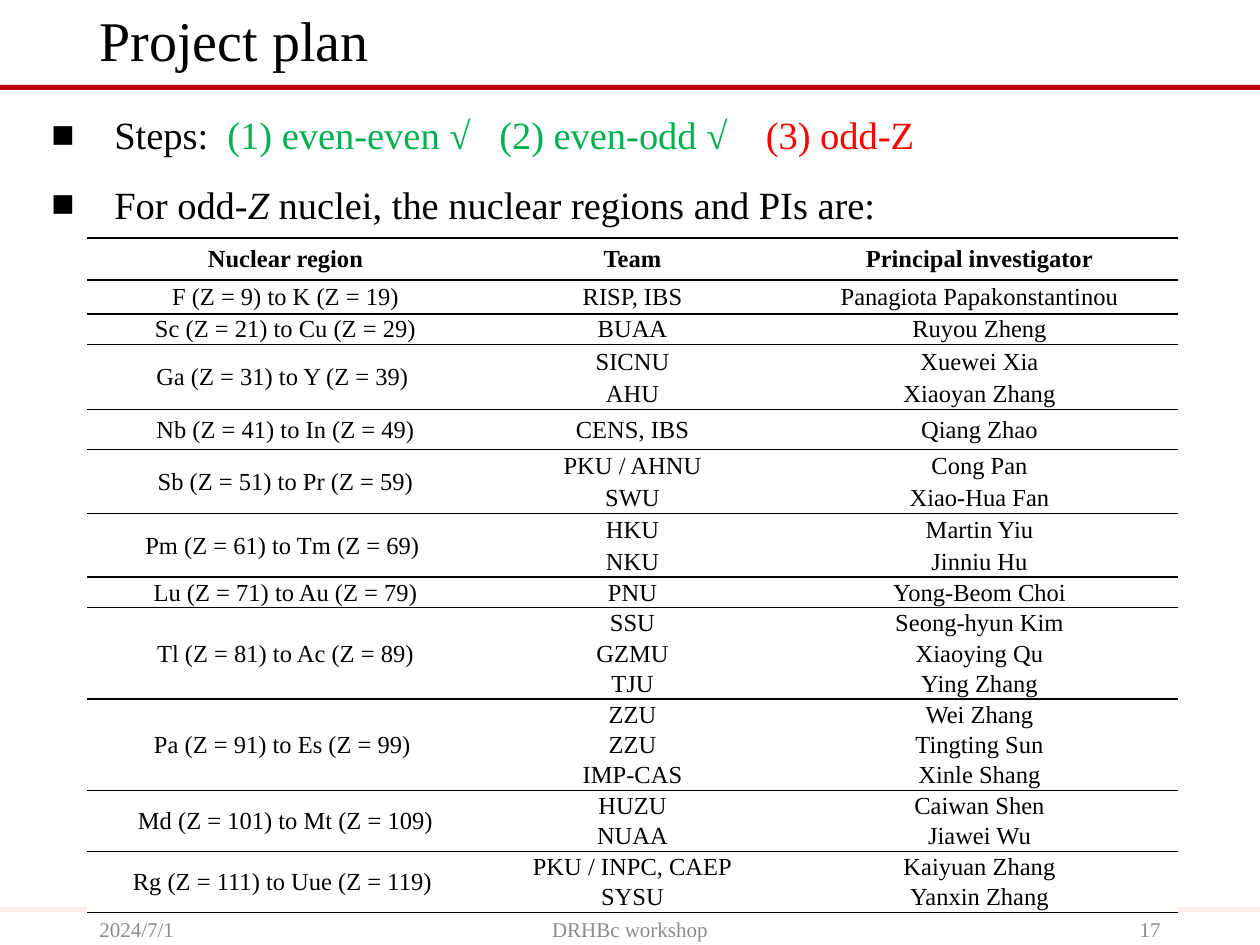
"""Build the project plan slide with its table of nuclear regions and investigators."""
from lxml.etree import SubElement
from pptx import Presentation
from pptx.dml.color import RGBColor
from pptx.enum.shapes import MSO_SHAPE as Shape
from pptx.enum.text import MSO_ANCHOR as Anchor, MSO_AUTO_SIZE as AutoSize, PP_ALIGN as Align
from pptx.oxml.ns import qn
from pptx.util import Emu, Pt

FONT = "Times New Roman"
BLACK, WHITE, GRAY, GREEN, RED = "000000", "FFFFFF", "8C8C8C", "00B050", "FF0000"
HEADINGS = ("Nuclear region", "Team", "Principal investigator")
COLUMN_WIDTHS = (397, 297, 397)
ROW_HEIGHTS = [42, 34, 30, 34, 31, 40, 33, 31, 33, 31] + [30] * 11
REGIONS = [
    ("F (Z = 9) to K (Z = 19)", [("RISP, IBS", "Panagiota Papakonstantinou")]),
    ("Sc (Z = 21) to Cu (Z = 29)", [("BUAA", "Ruyou Zheng")]),
    ("Ga (Z = 31) to Y (Z = 39) ", [("SICNU", "Xuewei Xia"), ("AHU", "Xiaoyan Zhang")]),
    ("Nb (Z = 41) to In (Z = 49)", [("CENS, IBS", "Qiang Zhao")]),
    ("Sb (Z = 51) to Pr (Z = 59)", [("PKU / AHNU", "Cong Pan"), ("SWU", "Xiao-Hua Fan")]),
    ("Pm (Z = 61) to Tm (Z = 69) ", [("HKU", "Martin Yiu"), ("NKU", "Jinniu Hu")]),
    ("Lu (Z = 71) to Au (Z = 79)", [("PNU", "Yong-Beom Choi")]),
    ("Tl (Z = 81) to Ac (Z = 89)",
     [("SSU", "Seong-hyun Kim"), ("GZMU", "Xiaoying Qu"), ("TJU", "Ying Zhang")]),
    ("Pa (Z = 91) to Es (Z = 99) ",
     [("ZZU", "Wei Zhang"), ("ZZU", "Tingting Sun"), ("IMP-CAS", "Xinle Shang")]),
    ("Md (Z = 101) to Mt (Z = 109)", [("HUZU", "Caiwan Shen"), ("NUAA", "Jiawei Wu")]),
    ("Rg (Z = 111) to Uue (Z = 119) ",
     [("PKU / INPC, CAEP", "Kaiyuan Zhang"), ("SYSU", "Yanxin Zhang")]),
]
BULLETS = [
    [("Steps:  ", {}), ("(1) even-even √   (2) even-odd √    ", {"color": GREEN}),
     ("(3) odd-Z", {"color": RED})],
    [("For odd-", {}), ("Z", {"italic": True}),
     (" nuclei, the nuclear regions and PIs are:", {})],
]


def px(value):
    """Turn pixels at 126 to the inch into EMU."""
    return Emu(round(value * 914400 / 126))


def rgb(color):
    """Turn a hex string into a colour."""
    return RGBColor.from_string(color)


def write(paragraph, text, size=14, color=BLACK, bold=False, italic=False, align=Align.LEFT):
    """Add a formatted run to a paragraph."""
    paragraph.alignment = align
    run = paragraph.add_run()
    run.text = text
    font = run.font
    font.name, font.size, font.bold, font.italic = FONT, Pt(size), bold, italic
    font.color.rgb = rgb(color)


def add_bar(slide, top, color):
    """Draw a thin bar across the slide."""
    bar = slide.shapes.add_shape(Shape.RECTANGLE, 0, px(top), px(1260), px(5))
    bar.shadow.inherit = False
    bar.fill.solid()
    bar.fill.fore_color.rgb = rgb(color)
    bar.line.fill.background()


def set_title(slide, text):
    """Place and fill the title placeholder."""
    title = slide.shapes.title
    title.left, title.top, title.width, title.height = px(87), px(8), px(1086), px(70)
    frame = title.text_frame
    frame.vertical_anchor = Anchor.MIDDLE
    frame.auto_size = AutoSize.NONE
    frame.paragraphs[0].line_spacing = 0.9
    write(frame.paragraphs[0], text, size=32)


def add_text_frame(slide, left, top, width, height, anchor=Anchor.TOP):
    """Add a wrapping text box and return its frame."""
    frame = slide.shapes.add_textbox(px(left), px(top), px(width), px(height)).text_frame
    frame.word_wrap = True
    frame.vertical_anchor = anchor
    return frame


def add_footer(slide, left, width, text, align):
    """Add one of the grey texts at the foot of the slide."""
    frame = add_text_frame(slide, left, 914, width, 30, Anchor.MIDDLE)
    write(frame.paragraphs[0], text, size=12, color=GRAY, align=align)


def add_bullets(slide):
    """Add the list of square-bulleted lines."""
    frame = add_text_frame(slide, 39, 82, 1183, 145)
    for index, runs in enumerate(BULLETS):
        paragraph = frame.add_paragraph() if index else frame.paragraphs[0]
        paragraph.line_spacing = 1.5
        for text, style in runs:
            write(paragraph, text, size=22, **style)
        properties = paragraph._p.get_or_add_pPr()
        properties.set("marL", str(px(63)))
        properties.set("indent", str(px(-63)))
        SubElement(properties, qn("a:buFont"), typeface=FONT)
        SubElement(properties, qn("a:buChar"), char="■")


def set_borders(cell, top, bottom):
    """Rule the chosen horizontal edges of a cell and clear the others."""
    properties = cell._tc.get_or_add_tcPr()
    for side, ruled in (("L", False), ("R", False), ("T", top), ("B", bottom)):
        line = SubElement(properties, qn(f"a:ln{side}"), w=str(Pt(1)))
        if ruled:
            fill = SubElement(line, qn("a:solidFill"))
            SubElement(fill, qn("a:srgbClr"), val=BLACK)
        else:
            SubElement(line, qn("a:noFill"))


def fill_cell(cell, text, top=True, bottom=True, bold=False):
    """Format a table cell and write its text, if any."""
    set_borders(cell, top, bottom)
    cell.fill.solid()
    cell.fill.fore_color.rgb = rgb(WHITE)
    cell.vertical_anchor = Anchor.MIDDLE
    cell.margin_left = cell.margin_right = cell.margin_top = px(1)
    cell.margin_bottom = 0
    if text:
        write(cell.text_frame.paragraphs[0], text, bold=bold, align=Align.CENTER)


def add_region_table(slide):
    """Add the table, with each region merged over the rows of its teams."""
    table = slide.shapes.add_table(
        len(ROW_HEIGHTS), len(HEADINGS), px(87), px(238),
        px(sum(COLUMN_WIDTHS)), px(sum(ROW_HEIGHTS))).table
    table.first_row = table.horz_banding = False
    for column, width in zip(table.columns, COLUMN_WIDTHS):
        column.width = px(width)
    for row, height in zip(table.rows, ROW_HEIGHTS):
        row.height = px(height)
    for column, heading in enumerate(HEADINGS):
        fill_cell(table.cell(0, column), heading, bold=True)
    first = 1
    for region, teams in REGIONS:
        last = first + len(teams) - 1
        for row, (team, investigator) in enumerate(teams, first):
            values = (region if row == first else "", team, investigator)
            for column, text in enumerate(values):
                fill_cell(table.cell(row, column), text, row == first, row == last)
        if last > first:
            table.cell(first, 0).merge(table.cell(last, 0))
            set_merged_bottom(table.cell(first, 0))
        first = last + 1


def set_merged_bottom(cell):
    """Rule the bottom edge of a merged cell."""
    line = cell._tc.tcPr.find(qn("a:lnB"))
    line.remove(line[0])
    fill = SubElement(line, qn("a:solidFill"))
    SubElement(fill, qn("a:srgbClr"), val=BLACK)


def main():
    """Build and save the slide."""
    presentation = Presentation()
    presentation.slide_width, presentation.slide_height = px(1260), px(945)
    slide = presentation.slides.add_slide(presentation.slide_layouts[5])
    add_bar(slide, 85, "C00000")
    add_bar(slide, 907, "FFEBEB")
    set_title(slide, "Project plan")
    add_footer(slide, 87, 284, "2024/7/1", Align.LEFT)
    add_footer(slide, 890, 283, "17", Align.RIGHT)
    add_footer(slide, 417, 426, "DRHBc workshop", Align.CENTER)
    add_bullets(slide)
    add_region_table(slide)
    presentation.save("out.pptx")


if __name__ == "__main__":
    main()
